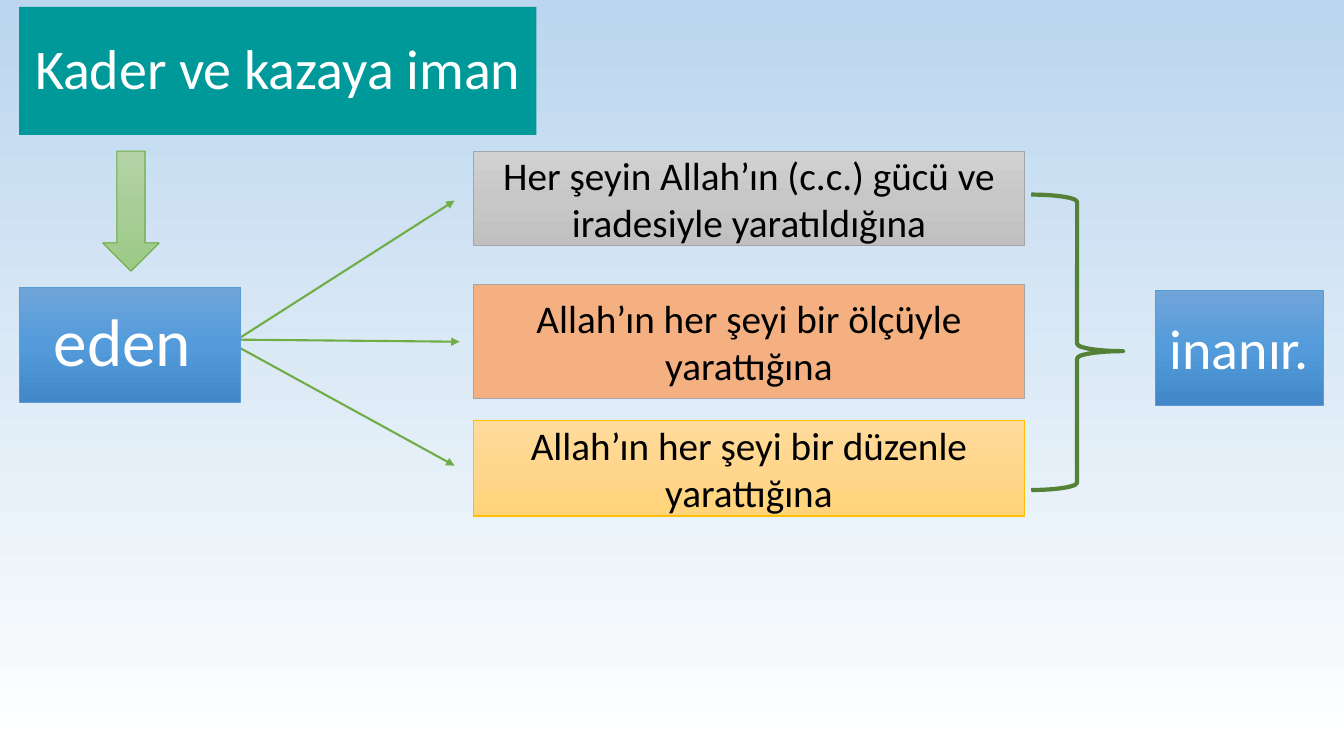
import pptx
import pptx.util
import pptx.dml.color
import pptx.enum.shapes
import pptx.enum.text
import pptx.oxml.ns
from lxml import etree

Pt = pptx.util.Pt
MSO = pptx.enum.shapes.MSO_SHAPE
qn = pptx.oxml.ns.qn

HEX = {
    "sky": ["FFFFFF", "BBD6EE"],
    "teal": ["009999"],
    "gray": ["D1D1D1", "C7C7C7", "C0C0C0"],
    "gold": ["FFDC9B", "FFD68D", "FFD478"],
    "peach": ["F4B081"],
    "leaf": ["B4D4A5", "A8CD97", "9BC985"],
    "blue": ["70A5DA", "539BDB", "4288C8"],
    "ash": "A5A5A5",
    "amber": "FFC000",
    "green": "70AD47",
    "moss": "548135",
    "azure": "5B9BD5",
    "white": "FFFFFF",
    "black": "000000",
}

TITLE = ((13.7, 5, 369.4, 91.4), "teal", None, "white", 0.9,
         [("Kader ve kazaya iman ", 40)])
BELIEFS = [
    (108, 67.7, "gray", "ash", "Her şeyin Allah’ın (c.c.) gücü ve iradesiyle yaratıldığına"),
    (300.2, 68.4, "gold", "amber", "Allah’ın her şeyi bir düzenle yarattığına"),
    (203, 81.4, "peach", "ash", "Allah’ın her şeyi bir ölçüyle yarattığına"),
]
LEFT, WIDTH = 338.4, 393.1
DOWN = (73.4, 108, 40.3, 85.7)
RAYS = [
    (167, 244.1, 324.7, 143.3),
    (168.5, 242.6, 328.3, 244.1),
    (160.6, 242.6, 324.7, 332.6),
]
WHO = ((13.7, 205.2, 158.4, 82.1), "blue", "azure", "white", 0.9, [("eden ", 48)])
BRACE = (736.6, 139, 65.5, 211)
VERB = ((825.1, 207.4, 120.2, 82.1), "blue", "azure", "white", 0.9,
        [("inanır.", 40), (" ", 48)])


def tint(name):
    return pptx.dml.color.RGBColor.from_string(HEX[name])


def blend(fill, root, name, angle):
    fill.gradient()
    fill.gradient_angle = angle
    stops = root.find(".//" + qn("a:gsLst"))
    for old in list(stops):
        stops.remove(old)
    shades = HEX[name]
    for i, shade in enumerate(shades):
        stop = etree.SubElement(stops, qn("a:gs"), pos=str(100000 * i // (len(shades) - 1)))
        etree.SubElement(stop, qn("a:srgbClr"), val=shade)


def draw(kind, area, fill, edge, weight=0.75):
    shape = slide.shapes.add_shape(kind, *map(Pt, area))
    shape.shadow.inherit = False
    if fill is None:
        shape.fill.background()
    elif len(HEX[fill]) == 1:
        shape.fill.solid()
        shape.fill.fore_color.rgb = pptx.dml.color.RGBColor.from_string(HEX[fill][0])
    else:
        blend(shape.fill, shape.element, fill, 270)
    if edge is None:
        shape.line.fill.background()
    else:
        shape.line.color.rgb = tint(edge)
        shape.line.width = Pt(weight)
    return shape


def label(area, fill, edge, ink, space, runs):
    frame = draw(MSO.RECTANGLE, area, fill, edge).text_frame
    frame.word_wrap = True
    frame.vertical_anchor = pptx.enum.text.MSO_ANCHOR.MIDDLE
    para = frame.paragraphs[0]
    para.alignment = pptx.enum.text.PP_ALIGN.CENTER
    para.line_spacing = space
    para.font.name = "Calibri"
    para.font.color.rgb = tint(ink)
    para.font.size = Pt(runs[0][1])
    for text, size in runs:
        run = para.add_run()
        run.text = text
        if size != runs[0][1]:
            run.font.size = Pt(size)


def ray(ends):
    line = slide.shapes.add_connector(pptx.enum.shapes.MSO_CONNECTOR.STRAIGHT, *map(Pt, ends))
    line.line.color.rgb = tint("green")
    line.line.width = Pt(1.5)
    props = line.element.spPr
    etree.SubElement(props.find(qn("a:ln")), qn("a:tailEnd"), type="triangle")
    etree.SubElement(props, qn("a:effectLst"))


deck = pptx.Presentation()
deck.slide_width, deck.slide_height = Pt(960), Pt(540)
slide = deck.slides.add_slide(deck.slide_layouts[6])
blend(slide.background.fill, slide.element, "sky", 90)

label(*TITLE)
for top, height, fill, edge, text in BELIEFS:
    label((LEFT, top, WIDTH, height), fill, edge, "black", 1.0, [(text, 28)])
draw(MSO.DOWN_ARROW, DOWN, "leaf", "green")
for ends in RAYS:
    ray(ends)
label(*WHO)
brace = draw(MSO.RIGHT_BRACE, BRACE, None, "moss", 3)
brace.adjustments[0] = 0.08
brace.adjustments[1] = 0.53
label(*VERB)

deck.save("out.pptx")
